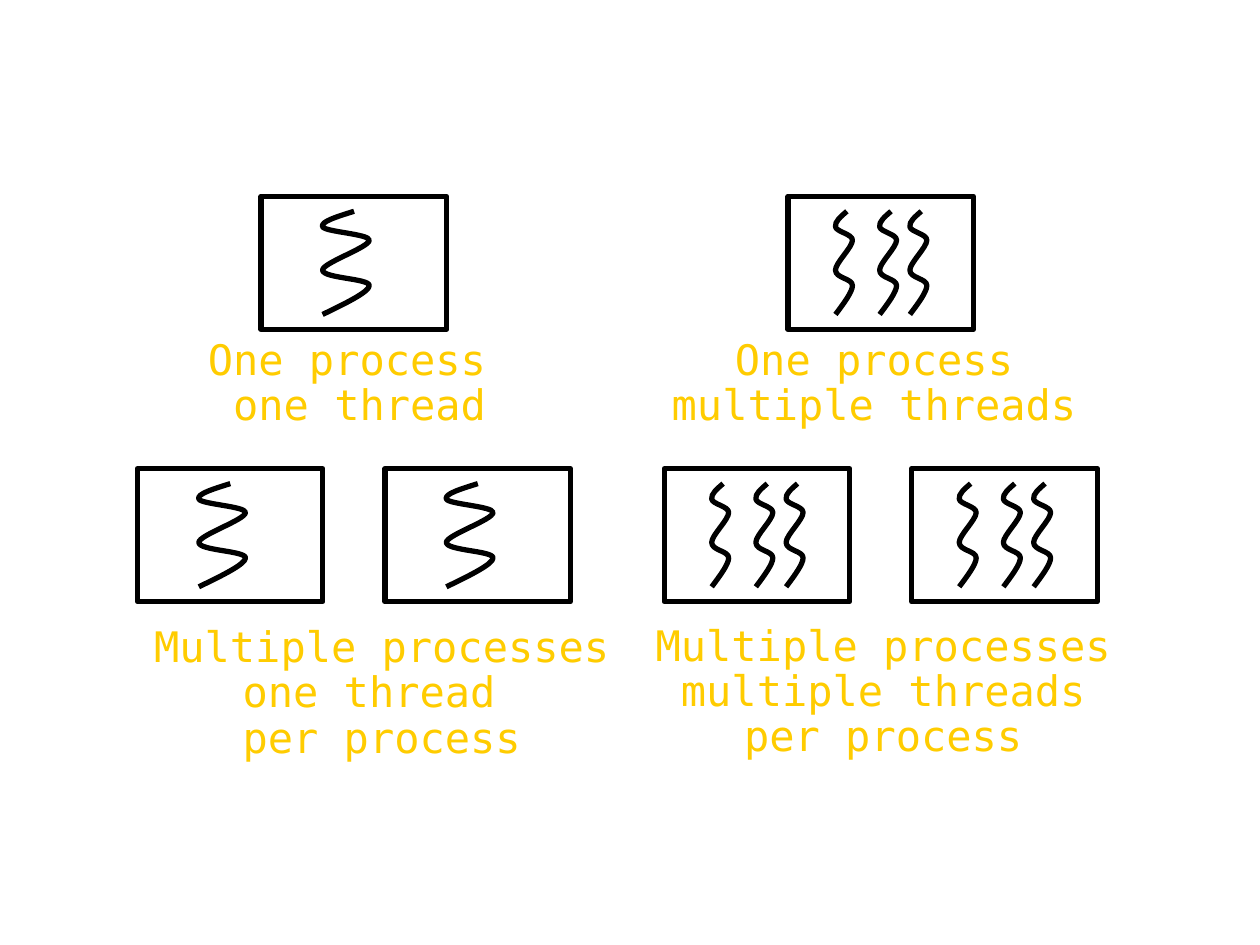
from lxml import etree
from pptx import Presentation
from pptx import util as u
from pptx.dml.color import RGBColor
from pptx.enum import shapes, text
from pptx.oxml.ns import qn

PROCESS_W, PROCESS_H, PROCESS_STEP = 3.74, 2.68, 4.99
THREAD_TOP, THREAD_H = 0.3, 2.08
SINGLE_THREAD = {"width": 0.99, "lefts": [1.19]}
MULTIPLE_THREADS = {"width": 0.36, "lefts": [0.94, 1.83, 2.44]}
CAPTION_FONT = {"name": "DejaVu Sans Mono", "size": u.Pt(24)}

# Start point, then three Bézier points per curve, as fractions of the thread's box
THREAD_POINTS = [
    (0.05, 1),
    (0.53, 0.89), (1, 0.78), (1, 0.72),
    (1, 0.65), (0.05, 0.65), (0.05, 0.57),
    (0.05, 0.5), (1, 0.35), (1, 0.28),
    (1, 0.22), (0.1, 0.2), (0.05, 0.15),
    (0, 0.1), (0.36, 0.05), (0.69, 0),
]


def color(hex_value):
    return RGBColor.from_string(hex_value)


def outline(shape):
    shape.shadow.inherit = False
    shape.fill.background()
    shape.line.color.rgb = color("000000")
    shape.line.width = u.Pt(3)


def curve_segments(freeform):
    """Turn each three straight segments into one cubic Bézier curve."""
    path = next(freeform.element.iter(qn("a:path")))
    segments = path.findall(qn("a:lnTo"))
    for start in range(0, len(segments), 3):
        curve = etree.SubElement(path, qn("a:cubicBezTo"))
        for segment in segments[start:start + 3]:
            curve.append(segment[0])
            path.remove(segment)


def add_thread(slide, left, top, width, height):
    points = [(u.Cm(left + x * width), u.Cm(top + y * height))
              for x, y in THREAD_POINTS]
    builder = slide.shapes.build_freeform(*points[0])
    builder.add_line_segments(points[1:], close=False)
    thread = builder.convert_to_shape()
    curve_segments(thread)
    outline(thread)


def add_process(slide, left, top, threads):
    process = slide.shapes.add_shape(
        shapes.MSO_SHAPE.RECTANGLE,
        u.Cm(left), u.Cm(top), u.Cm(PROCESS_W), u.Cm(PROCESS_H))
    outline(process)
    for offset in threads["lefts"]:
        add_thread(slide, left + offset, top + THREAD_TOP,
                   threads["width"], THREAD_H)


def add_caption(slide, left, top, width, height, wording):
    caption = slide.shapes.add_textbox(
        u.Cm(left), u.Cm(top), u.Cm(width), u.Cm(height))
    frame = caption.text_frame
    frame.word_wrap = True
    frame.text = wording
    for paragraph in frame.paragraphs:
        paragraph.alignment = text.PP_ALIGN.CENTER
        paragraph.line_spacing = 0.9
        for run in paragraph.runs:
            for key, value in CAPTION_FONT.items():
                setattr(run.font, key, value)
            run.font.color.rgb = color("FFCC00")


def add_model(slide, left, top, width, processes, threads, caption_box, wording):
    """Centre the processes in the width; caption_box is relative to left and top."""
    used = PROCESS_W + (processes - 1) * PROCESS_STEP
    first = left + (width - used) / 2
    for index in range(processes):
        add_process(slide, first + index * PROCESS_STEP, top, threads)
    dx, dy, caption_w, caption_h = caption_box
    add_caption(slide, left + dx, top + dy, caption_w, caption_h, wording)


def main():
    prs = Presentation()
    prs.slide_width, prs.slide_height = u.Cm(25.4), u.Cm(19.05)
    slide = prs.slides.add_slide(prs.slide_layouts[6])

    model_w = PROCESS_W + PROCESS_STEP
    left_column, right_column = 2.77, 13.39
    upper_row, lower_row = 3.96, 9.45
    models = [
        (left_column, upper_row, 1, SINGLE_THREAD, (-0.08, 2.75, 9.12, 1.3),
         "One process \vone thread"),
        (right_column, upper_row, 1, MULTIPLE_THREADS, (-0.33, 2.75, 9.12, 1.3),
         "One process\nmultiple threads"),
        (left_column, lower_row, 2, SINGLE_THREAD, (-0.08, 3.05, 10.01, 2.13),
         "Multiple processes\none thread \vper process"),
        (right_column, lower_row, 2, MULTIPLE_THREADS, (-0.69, 3.02, 10.21, 2.13),
         "Multiple processes\nmultiple threads per process"),
    ]
    for left, top, processes, threads, caption_box, wording in models:
        add_model(slide, left, top, model_w, processes, threads,
                  caption_box, wording)
    prs.save("out.pptx")


if __name__ == "__main__":
    main()
